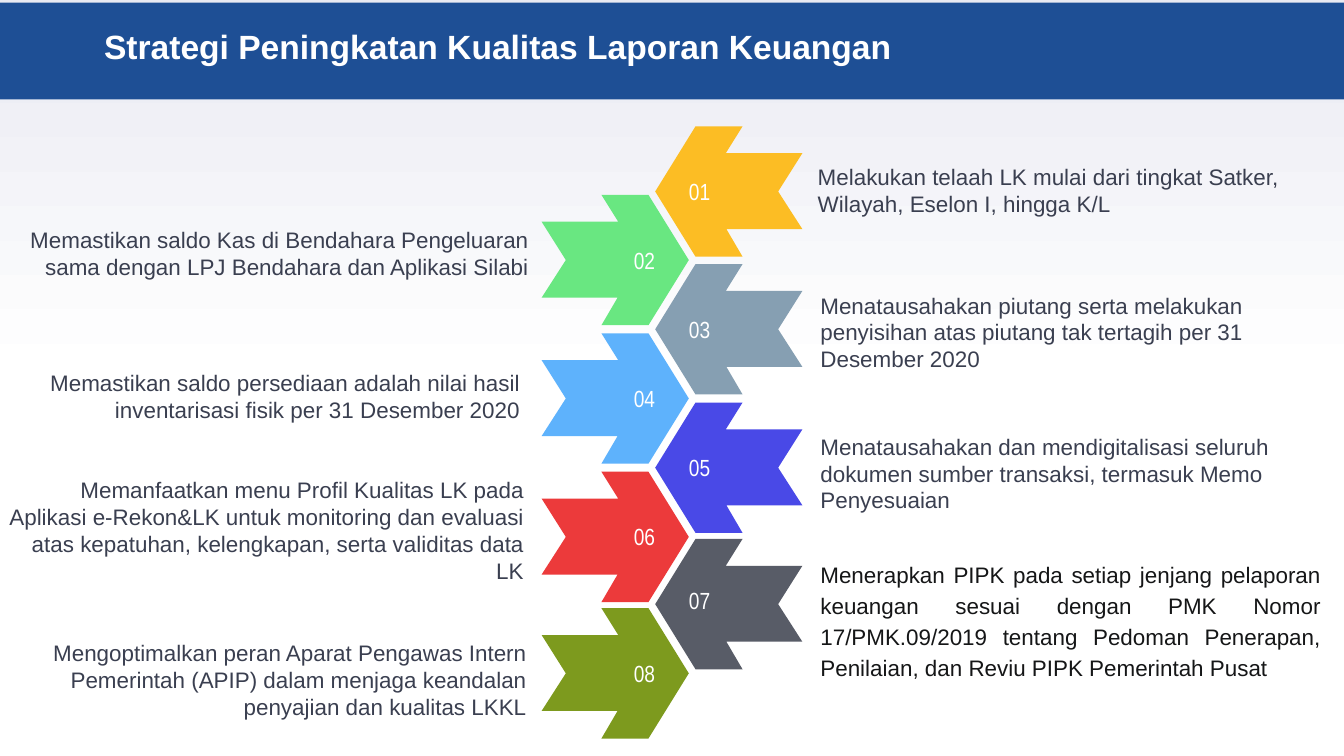
from pptx import Presentation
from pptx.dml.color import RGBColor
from pptx.enum.shapes import MSO_SHAPE
from pptx.enum.text import MSO_ANCHOR, MSO_AUTO_SIZE, PP_ALIGN
from pptx.util import Inches, Pt

WIDE, HIGH = 2.19, 1.94
EDGE = [(0.6, 0), (0, 0.97), (0.6, 1.94), (1.3, 1.94), (1.06, 1.53),
        (2.19, 1.53), (1.83, 0.97), (2.19, 0.4), (1.05, 0.4), (1.3, 0)]
INK = "3A3F50"
STEPS = [
    (1.88, "FCBD24", (12.07, 2.38, 7.68, 0.91),
     "Melakukan telaah LK mulai dari tingkat Satker, Wilayah, Eselon I, hingga K/L"),
    (2.9, "69E781", (0.28, 3.32, 7.68, 0.91),
     "Memastikan saldo Kas di Bendahara Pengeluaran sama dengan LPJ Bendahara dan Aplikasi Silabi"),
    (3.93, "869FB2", (12.11, 4.29, 7.64, 1.31),
     "Menatausahakan piutang serta melakukan penyisihan atas piutang tak tertagih per 31 Desember 2020"),
    (4.96, "5EB2FC", (0.28, 5.45, 7.55, 0.91),
     "Memastikan saldo persediaan adalah nilai hasil inventarisasi fisik per 31 Desember 2020"),
    (5.99, "4949E7", (12.11, 6.39, 7.89, 1.31),
     "Menatausahakan dan mendigitalisasi seluruh dokumen sumber transaksi, termasuk Memo Penyesuaian"),
    (7.02, "EC3A3B", (0, 7.04, 7.89, 1.72),
     "Memanfaatkan menu Profil Kualitas LK pada Aplikasi e-Rekon&LK untuk monitoring dan evaluasi "
     "atas kepatuhan, kelengkapan, serta validitas data LK"),
    (8.02, "585C67", (12.11, 8.24, 7.64, 1.96),
     "Menerapkan PIPK pada setiap jenjang pelaporan keuangan sesuai dengan PMK Nomor "
     "17/PMK.09/2019 tentang Pedoman Penerapan, Penilaian, dan Reviu PIPK Pemerintah Pusat"),
    (9.05, "7D9A1E", (0.28, 9.46, 7.65, 1.31),
     "Mengoptimalkan peran Aparat Pengawas Intern Pemerintah (APIP) dalam menjaga keandalan "
     "penyajian dan kualitas LKKL"),
]


def tint(code):
    """Return the colour for a hex string."""
    return RGBColor.from_string(code)


def paint(shape, code):
    """Give a shape a plain fill with no line or shadow."""
    shape.shadow.inherit = False
    shape.fill.solid()
    shape.fill.fore_color.rgb = tint(code)
    shape.line.fill.background()


def write(slide, box, text, size, code, align=PP_ALIGN.LEFT, face="Arial"):
    """Add a wrapped text box and return its frame and paragraph."""
    frame = slide.shapes.add_textbox(*map(Inches, box)).text_frame
    frame.word_wrap = True
    para = frame.paragraphs[0]
    para.text = text
    para.alignment = align
    para.font.size = Pt(size)
    para.font.name = face
    para.font.color.rgb = tint(code)
    return frame, para


def add_back(slide):
    """Fade the slide from white up to pale grey."""
    fill = slide.background.fill
    fill.gradient()
    fill.gradient_angle = 90
    for stop, place, code in zip(fill.gradient_stops, (0.5, 1), ("FFFFFF", "E9EAF2")):
        stop.position = place
        stop.color.rgb = tint(code)


def add_head(slide, box, text):
    """Draw the title band and its text."""
    left, top, width, height = box
    band = slide.shapes.add_shape(MSO_SHAPE.RECTANGLE, *map(Inches, box))
    paint(band, "1E4F95")
    place = (left + 1.47, top + 0.37, width - 1.47, 0.65)
    frame, para = write(slide, place, text, 36, "FFFFFF")
    frame.auto_size = MSO_AUTO_SIZE.SHAPE_TO_FIT_TEXT
    para.font.bold = True
    para.line_spacing = 0.9


def add_arrow(slide, left, top, code, label, flip, drop):
    """Draw a notched arrow with its number."""
    spots = [(Inches(left + (WIDE - x if flip else x)), Inches(top + y)) for x, y in EDGE]
    pen = slide.shapes.build_freeform(*spots[0])
    pen.add_line_segments(spots[1:], close=True)
    paint(pen.convert_to_shape(), code)
    box = (left + (1 if flip else 0.13), top + drop, 1.06, 1.23)
    frame, _ = write(slide, box, label, 25, "FFFFFF", PP_ALIGN.CENTER, "Arial Narrow")
    frame.vertical_anchor = MSO_ANCHOR.MIDDLE
    frame.margin_top = frame.margin_bottom = Inches(0.1)


def add_note(slide, box, text, flip, last):
    """Write the text beside an arrow, justified for the last on the right."""
    align = PP_ALIGN.RIGHT if flip else PP_ALIGN.JUSTIFY if last else PP_ALIGN.LEFT
    frame, para = write(slide, box, text, 24, "151617" if last else INK, align)
    frame.auto_size = MSO_AUTO_SIZE.SHAPE_TO_FIT_TEXT
    if last:
        para.line_spacing = 1.15
        para.space_after = Pt(6)


def main():
    """Build and save the slide."""
    deck = Presentation()
    deck.slide_width, deck.slide_height = Inches(20), Inches(11.25)
    slide = deck.slides.add_slide(deck.slide_layouts[6])
    add_back(slide)
    add_head(slide, (-0.02, 0.04, 20.02, 1.44), "Strategi Peningkatan Kualitas Laporan Keuangan")
    for count, (top, code, box, text) in enumerate(STEPS, 1):
        flip, last = count % 2 == 0, count == 7
        add_arrow(slide, 8.06 if flip else 9.75, top, code, f"{count:02}", flip,
                  0.29 if last else 0.35)
        add_note(slide, box, text, flip, last)
    deck.save("out.pptx")


if __name__ == "__main__":
    main()
